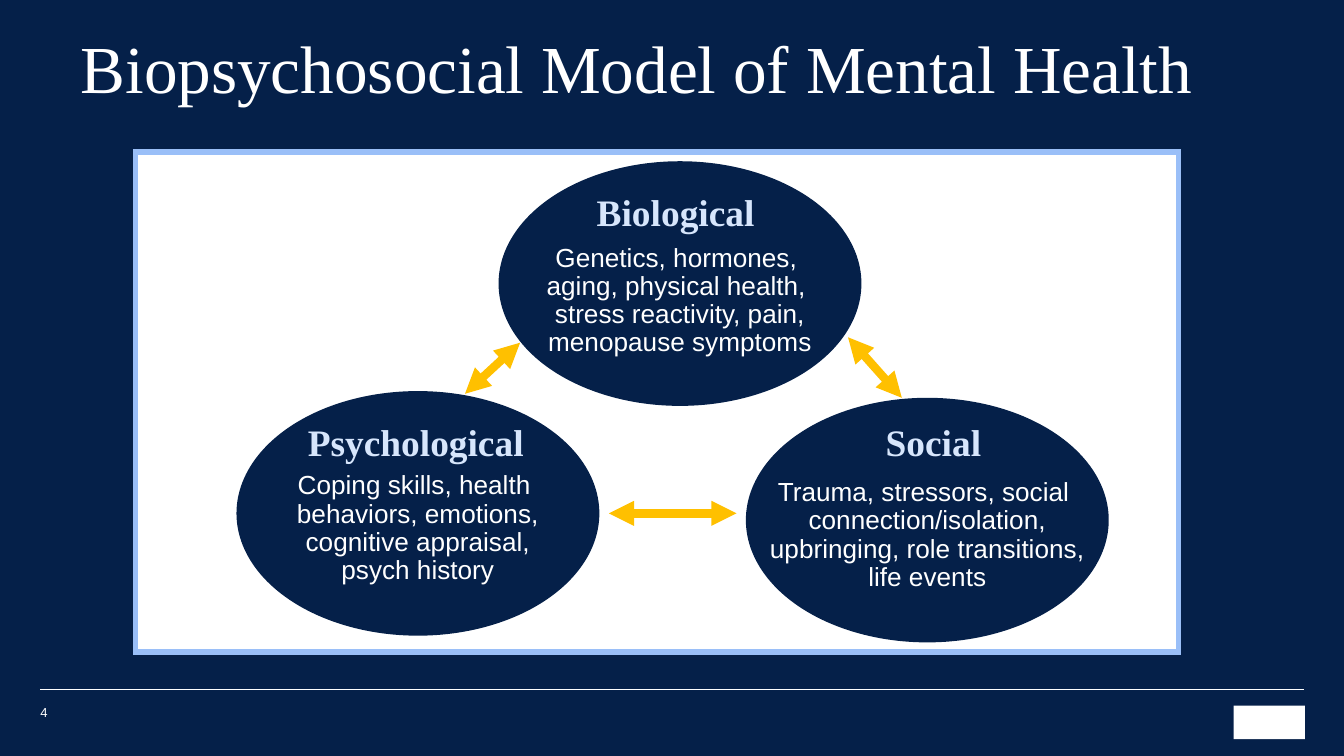
"""Build the biopsychosocial model slide: three linked ellipses in a framed panel."""
from dataclasses import dataclass

from lxml.etree import SubElement
from pptx import Presentation
from pptx.dml.color import RGBColor
from pptx.enum.shapes import MSO_CONNECTOR, MSO_SHAPE
from pptx.enum.text import MSO_ANCHOR, MSO_AUTO_SIZE, PP_ALIGN
from pptx.oxml.ns import qn
from pptx.util import Inches, Pt


@dataclass(frozen=True)
class Theme:
    navy: str = "052049"
    white: str = "FFFFFF"
    frame: str = "9ABFF8"
    heading: str = "D7E6FC"
    arrow: str = "FFC000"
    serif: str = "Times New Roman"
    sans: str = "Arial"
    title_size: int = 36
    heading_size: int = 20
    body_size: int = 14
    number_size: int = 7


THEME = Theme()
SLIDE_WIDTH = Inches(10)
SLIDE_HEIGHT = SLIDE_WIDTH * 9 // 16
TITLE = "Biopsychosocial Model of Mental Health"
SLIDE_NUMBER = "4"
ELLIPSE_SIZE = (2.7, 1.82)
FACTORS = [
    {"heading": "Biological", "heading_box": (4.44, 1.41, 1.37, 0.34),
     "ellipse_at": (3.71, 1.2), "top_inset": 0.31,
     "lines": ["Genetics, hormones, ", "aging, physical health, ",
               "stress reactivity, pain,", "menopause symptoms"]},
    {"heading": "Psychological", "heading_box": (2.29, 3.12, 1.65, 0.34),
     "ellipse_at": (1.76, 2.91), "top_inset": 0.28,
     "lines": ["Coping skills, health ", "behaviors, emotions,",
               "cognitive appraisal,", "psych history"]},
    {"heading": "Social", "heading_box": (6.59, 3.12, 1.37, 0.34),
     "ellipse_at": (5.55, 2.96), "top_inset": 0.28,
     "lines": ["Trauma, stressors, social ", "connection/isolation,",
               "upbringing, role transitions,", "life events"]},
]
ARROWS = [(4.53, 3.82, 5.48, 3.82), (3.46, 2.93, 3.87, 2.55), (6.31, 2.51, 6.71, 2.96)]
FOOTER_RULE = (0.3, 5.13, 9.7, 5.13)


def inches(values):
    return [Inches(value) for value in values]


def add_run(paragraph, text, font_name, size, color, bold=False):
    run = paragraph.add_run()
    run.text = text
    run.font.name = font_name
    run.font.size = Pt(size)
    run.font.bold = bold
    run.font.color.rgb = RGBColor.from_string(color)


def add_filled_shape(slide, kind, box, fill, line=None, width=0):
    shape = slide.shapes.add_shape(kind, *inches(box))
    shape.shadow.inherit = False
    shape.fill.solid()
    shape.fill.fore_color.rgb = RGBColor.from_string(fill)
    if line:
        shape.line.color.rgb = RGBColor.from_string(line)
        shape.line.width = Pt(width)
        SubElement(shape.line._get_or_add_ln(), qn("a:miter"), lim="800000")
    else:
        shape.line.fill.background()
    return shape


def add_line(slide, ends, color, width, arrowheads=False):
    connector = slide.shapes.add_connector(MSO_CONNECTOR.STRAIGHT, *inches(ends))
    connector.line.color.rgb = RGBColor.from_string(color)
    connector.line.width = Pt(width)
    if arrowheads:
        line = connector.line._get_or_add_ln()
        for end in ("a:headEnd", "a:tailEnd"):
            SubElement(line, qn(end), type="triangle")
    SubElement(connector._element.spPr, qn("a:effectLst"))


def add_label(slide, box, text, font_name, size, color, bold=False, anchor=MSO_ANCHOR.TOP):
    frame = slide.shapes.add_textbox(*inches(box)).text_frame
    frame.word_wrap = True
    frame.vertical_anchor = anchor
    frame.margin_left = frame.margin_right = frame.margin_top = frame.margin_bottom = 0
    add_run(frame.paragraphs[0], text, font_name, size, color, bold)


def add_title(slide):
    title = slide.shapes.title
    title.left, title.top, title.width, title.height = inches((0.5, 0.35, 8.94, 0.5))
    frame = title.text_frame
    frame.auto_size = MSO_AUTO_SIZE.NONE
    frame.vertical_anchor = MSO_ANCHOR.BOTTOM
    paragraph = frame.paragraphs[0]
    paragraph.alignment = PP_ALIGN.LEFT
    paragraph.line_spacing = 0.85
    add_run(paragraph, TITLE, THEME.serif, THEME.title_size, THEME.white)


def add_factor_ellipse(slide, factor):
    box = (*factor["ellipse_at"], *ELLIPSE_SIZE)
    frame = add_filled_shape(slide, MSO_SHAPE.OVAL, box, THEME.navy).text_frame
    frame.word_wrap = False
    frame.vertical_anchor = MSO_ANCHOR.MIDDLE
    frame.margin_top = Inches(factor["top_inset"])
    for index, text in enumerate(factor["lines"]):
        paragraph = frame.add_paragraph() if index else frame.paragraphs[0]
        paragraph.alignment = PP_ALIGN.CENTER
        paragraph.line_spacing = 0.9
        add_run(paragraph, text, THEME.sans, THEME.body_size, THEME.white)


def main():
    presentation = Presentation()
    presentation.slide_width = SLIDE_WIDTH
    presentation.slide_height = SLIDE_HEIGHT
    slide = presentation.slides.add_slide(presentation.slide_layouts[5])
    slide.background.fill.solid()
    slide.background.fill.fore_color.rgb = RGBColor.from_string(THEME.navy)

    add_line(slide, FOOTER_RULE, THEME.white, 0.25)
    add_filled_shape(slide, MSO_SHAPE.RECTANGLE, (9.18, 5.25, 0.53, 0.25), THEME.white)
    add_label(slide, (0.3, 5.23, 0.27, 0.13), SLIDE_NUMBER, THEME.sans,
              THEME.number_size, THEME.white, anchor=MSO_ANCHOR.BOTTOM)
    add_title(slide)
    add_filled_shape(slide, MSO_SHAPE.RECTANGLE, (1.01, 1.13, 7.76, 3.72),
                     THEME.white, THEME.frame, 3)
    for factor in FACTORS:
        add_factor_ellipse(slide, factor)
    for ends in ARROWS:
        add_line(slide, ends, THEME.arrow, 4.5, arrowheads=True)
    for factor in FACTORS:
        add_label(slide, factor["heading_box"], factor["heading"], THEME.serif,
                  THEME.heading_size, THEME.heading, bold=True)
    presentation.save("out.pptx")


if __name__ == "__main__":
    main()
